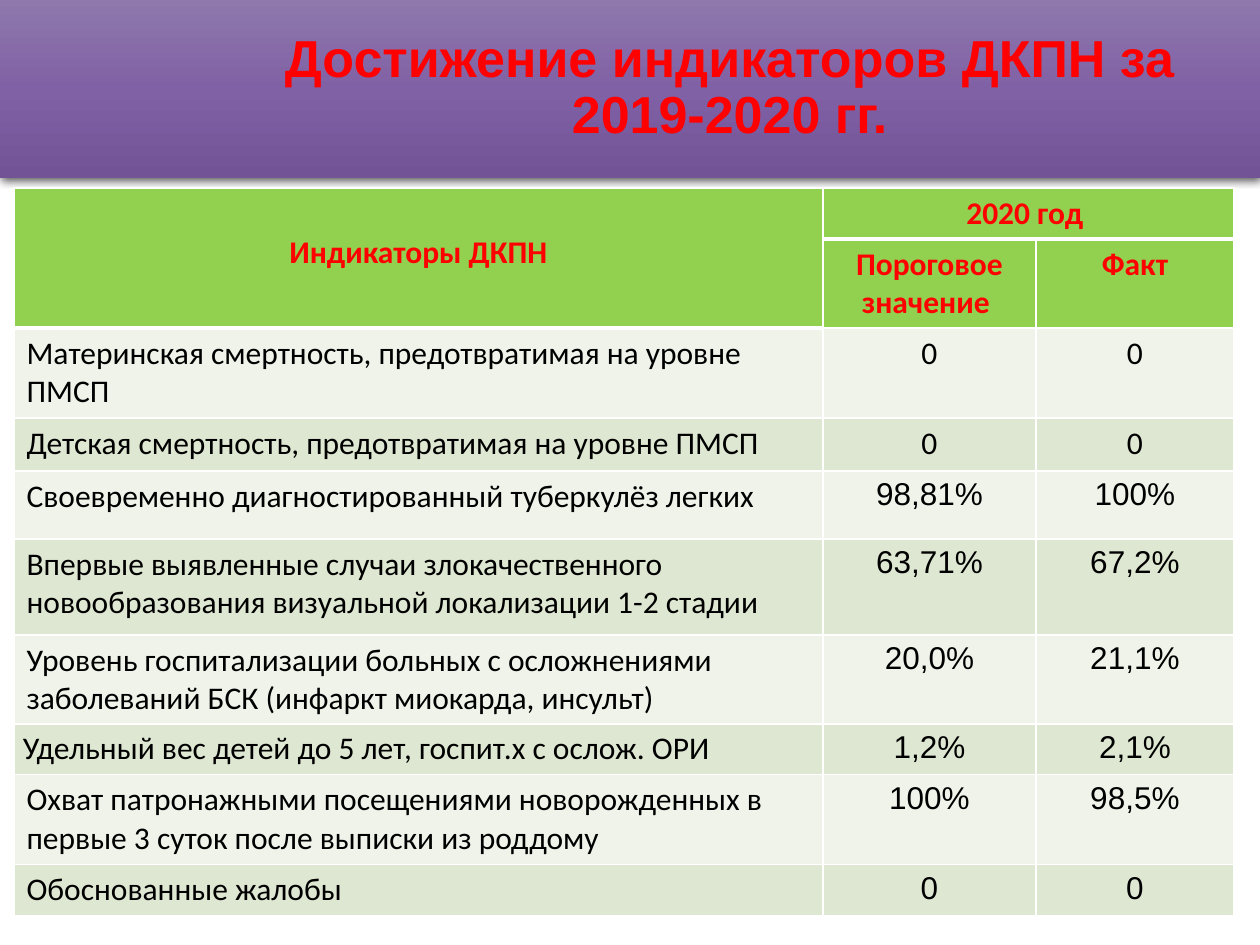
from lxml.etree import SubElement
from pptx import Presentation
from pptx.dml.color import RGBColor
from pptx.enum.shapes import MSO_SHAPE
from pptx.enum.text import MSO_ANCHOR, PP_ALIGN
from pptx.oxml import parse_xml
from pptx.oxml.ns import nsdecls, qn
from pptx.util import Pt

PX = 914400 // 126
RED = RGBColor(0xFF, 0x00, 0x00)
BLACK = RGBColor(0x00, 0x00, 0x00)
GREEN = RGBColor(0x92, 0xD0, 0x50)
LIGHT = RGBColor(0xEF, 0xF3, 0xEA)
DARK = RGBColor(0xDE, 0xE7, 0xD1)

BAND_GRADIENT = f"""<a:gradFill {nsdecls('a')} rotWithShape="1"><a:gsLst>
<a:gs pos="0"><a:srgbClr val="8E78AC"/></a:gs>
<a:gs pos="50000"><a:srgbClr val="8061A5"/></a:gs>
<a:gs pos="100000"><a:srgbClr val="715396"/></a:gs>
</a:gsLst><a:lin ang="5400000" scaled="0"/></a:gradFill>"""
BAND_SHADOW = f"""<a:effectLst {nsdecls('a')}>
<a:outerShdw blurRad="57150" dist="19050" dir="5400000" algn="ctr" rotWithShape="0">
<a:srgbClr val="000000"><a:alpha val="63000"/></a:srgbClr></a:outerShdw></a:effectLst>"""

COLUMNS = [809, 213, 198]
ROWS = [51, 89, 90, 53, 68, 96, 89, 48, 90, 51]
INDICATORS = [
    ("Материнская смертность, предотвратимая на уровне ПМСП", "0", "0", "Calibri"),
    ("Детская смертность, предотвратимая на уровне ПМСП", "0", "0", "Calibri"),
    ("Своевременно диагностированный туберкулёз легких", "98,81%", "100%", "Arial"),
    ("Впервые выявленные случаи злокачественного новообразования "
     "визуальной локализации 1-2 стадии", "63,71%", "67,2%", "Arial"),
    ("Уровень госпитализации больных с осложнениями заболеваний БСК "
     "(инфаркт миокарда, инсульт)", "20,0%", "21,1%", "Arial"),
    ("Удельный вес детей до 5 лет, госпит.х с ослож. ОРИ", "1,2%", "2,1%", "Arial"),
    ("Охват патронажными посещениями новорожденных в первые 3 суток "
     "после выписки из роддому", "100%", "98,5%", "Arial"),
    ("Обоснованные жалобы", "0", "0", "Arial"),
]
TIGHT_ROW = 7


def add_run(p, text, size, font, color, bold=False):
    r = p.add_run()
    r.text = text
    r.font.size = Pt(size)
    r.font.name = font
    r.font.bold = bold
    r.font.color.rgb = color


def style_cell(cell, fill, bottom=1):
    """Fill a cell and draw its white borders, widths in points."""
    tc_pr = cell._tc.get_or_add_tcPr()
    for side, width in (("L", 1), ("R", 1), ("T", 1), ("B", bottom)):
        ln = SubElement(tc_pr, qn(f"a:ln{side}"), w=str(Pt(width)))
        solid = SubElement(ln, qn("a:solidFill"))
        SubElement(solid, qn("a:srgbClr"), val="FFFFFF")
    cell.fill.solid()
    cell.fill.fore_color.rgb = fill


prs = Presentation()
prs.slide_width = 1260 * PX
prs.slide_height = 945 * PX
s = prs.slides.add_slide(prs.slide_layouts[6])

# Title band
band = s.shapes.add_shape(MSO_SHAPE.RECTANGLE, 0, 0, 1260 * PX, 178 * PX)
band.line.fill.background()
ln = band._element.spPr.find(qn("a:ln"))
ln.addprevious(parse_xml(BAND_GRADIENT))
ln.addnext(parse_xml(BAND_SHADOW))

title = s.shapes.add_textbox(238 * PX, 28 * PX, 984 * PX, 122 * PX)
tf = title.text_frame
tf.word_wrap = True
tf.vertical_anchor = MSO_ANCHOR.MIDDLE
p = tf.paragraphs[0]
p.alignment = PP_ALIGN.CENTER
p.line_spacing = 0.9
add_run(p, "Достижение индикаторов ДКПН за 2019-2020 гг.", 29.7, "Arial", RED, True)

# Indicator table
frame = s.shapes.add_table(len(ROWS), len(COLUMNS), 14 * PX, 188 * PX,
                           sum(COLUMNS) * PX, sum(ROWS) * PX)
table = frame.table
for column, width in zip(table.columns, COLUMNS):
    column.width = width * PX
for row, height in zip(table.rows, ROWS):
    row.height = height * PX

for i in range(2):
    for j in range(3):
        style_cell(table.cell(i, j), GREEN, 3 if i == 0 or j == 0 else 1)
table.cell(0, 0).merge(table.cell(1, 0))
table.cell(0, 1).merge(table.cell(0, 2))
table.cell(0, 0).margin_top = 45 * PX

headings = [(0, 0, "Индикаторы ДКПН"), (0, 1, "2020 год "),
            (1, 1, "Пороговое значение "), (1, 2, "Факт")]
for i, j, text in headings:
    p = table.cell(i, j).text_frame.paragraphs[0]
    p.alignment = PP_ALIGN.CENTER
    add_run(p, text, 18, "Calibri", RED, True)

for i, (name, threshold, actual, value_font) in enumerate(INDICATORS, 2):
    for j, text in enumerate((name, threshold, actual)):
        cell = table.cell(i, j)
        style_cell(cell, DARK if i % 2 else LIGHT)
        p = cell.text_frame.paragraphs[0]
        p.alignment = PP_ALIGN.CENTER if j else PP_ALIGN.LEFT
        add_run(p, text, 18, value_font if j else "Calibri", BLACK)

tight = table.cell(TIGHT_ROW, 0)
tight.margin_left = tight.margin_right = 9 * PX
tight.margin_top = tight.margin_bottom = 0
tight.text_frame.paragraphs[0].line_spacing = 1.15

prs.save("out.pptx")
